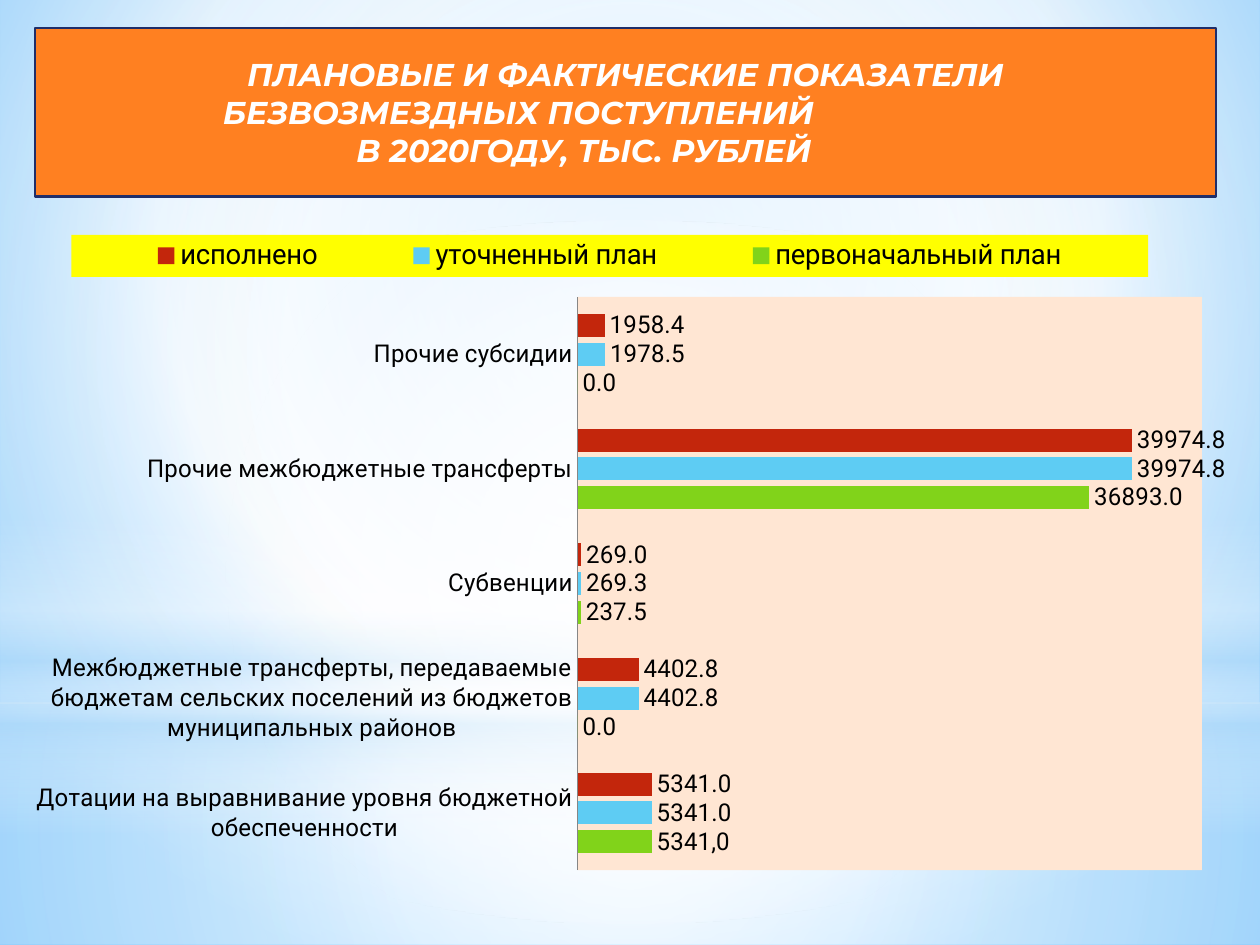
from lxml.etree import SubElement
from pptx import Presentation
from pptx.chart.data import CategoryChartData
from pptx.dml.color import RGBColor
from pptx.enum.chart import XL_CHART_TYPE as ChartType, XL_LABEL_POSITION as LabelPosition
from pptx.enum.chart import XL_LEGEND_POSITION as LegendPosition, XL_TICK_MARK as TickMark
from pptx.enum.shapes import MSO_SHAPE as ShapeKind
from pptx.enum.text import MSO_ANCHOR as Anchor, MSO_AUTO_SIZE as AutoSize, PP_ALIGN as Align
from pptx.oxml import parse_xml
from pptx.oxml.ns import nsdecls, qn
from pptx.util import Inches, Pt

WIDTH, HEIGHT = Inches(10), Inches(7.5)

BLACK = RGBColor(0x00, 0x00, 0x00)
WHITE = RGBColor(0xFF, 0xFF, 0xFF)
GRAY = RGBColor(0x86, 0x86, 0x86)
YELLOW = RGBColor(0xFF, 0xFF, 0x00)
PEACH = RGBColor(0xFF, 0xE6, 0xD3)
ORANGE = RGBColor(0xFF, 0x80, 0x21)
NAVY = RGBColor(0x1F, 0x2E, 0x69)
GREEN = RGBColor(0x81, 0xD3, 0x1A)
SKY = RGBColor(0x5E, 0xCC, 0xF3)
RED = RGBColor(0xC3, 0x26, 0x0C)
PALE_BLUE = RGBColor(0xB4, 0xDC, 0xFA)
LIGHT_BLUE = RGBColor(0x9E, 0xD5, 0xFF)
DEEP_BLUE = RGBColor(0x5B, 0xB9, 0xFF)

CENTER = '<a:path path="circle"><a:fillToRect l="50000" t="50000" r="50000" b="50000"/></a:path>'
UPPER = '<a:path path="circle"><a:fillToRect l="20000" t="10000" r="20000" b="60000"/></a:path>'
DOWNWARD = '<a:lin ang="5400000" scaled="0"/>'

BACKDROP_STOPS = [(0, LIGHT_BLUE, 100), (60, WHITE, 100), (100, DEEP_BLUE, 100)]
BACKDROP_LAYERS = [
    (ShapeKind.RECTANGLE, 0.744, 0.256, CENTER,
     [(0, WHITE, 91), (37, WHITE, 76), (100, PALE_BLUE, 79)]),
    (ShapeKind.RECTANGLE, 0, 0.744, CENTER,
     [(0, WHITE, 89), (48, WHITE, 62), (100, PALE_BLUE, 79)]),
    (ShapeKind.RECTANGLE, 0.549, 0.333, DOWNWARD,
     [(0, WHITE, 0), (29, WHITE, 30), (45, PALE_BLUE, 40),
      (55, WHITE, 26), (65, PALE_BLUE, 60), (100, WHITE, 0)]),
    (ShapeKind.OVAL, 0.233, 0.744, CENTER, [(0, WHITE, 100), (56, WHITE, 0)]),
]

TITLE_LINES = [
    ("ПЛАНОВЫЕ И ФАКТИЧЕСКИЕ ПОКАЗАТЕЛИ", {}),
    ("БЕЗВОЗМЕЗДНЫХ ПОСТУПЛЕНИЙ", {"marR": Inches(1.7)}),
    ("В 2020ГОДУ, ТЫС. РУБЛЕЙ", {"marL": Inches(1.04)}),
]

CATEGORIES = [
    "Дотации на выравнивание уровня бюджетной обеспеченности",
    "Межбюджетные трансферты, передаваемые бюджетам сельских поселений "
    "из бюджетов муниципальных районов",
    "Субвенции",
    "Прочие межбюджетные трансферты",
    "Прочие субсидии",
]
SERIES = [
    ("первоначальный план", (5341, 0, 237.5, 36893, 0), GREEN),
    ("уточненный план", (5341, 4402.8, 269.3, 39974.8, 1978.5), SKY),
    ("исполнено", (5341, 4402.8, 269, 39974.8, 1958.4), RED),
]


def apply_format(target, values):
    for name, value in values.items():
        setattr(target, name, value)


def paint(fill, color):
    fill.solid()
    fill.fore_color.rgb = color


def paint_gradient(fill, owner, stops, direction):
    fill.solid()
    solid = next(owner.iter(qn("a:solidFill")))
    marks = "".join(
        f'<a:gs pos="{position * 1000}"><a:srgbClr val="{color}">'
        f'<a:alpha val="{opacity * 1000}"/></a:srgbClr></a:gs>'
        for position, color, opacity in stops)
    gradient = parse_xml(f'<a:gradFill {nsdecls("a")} rotWithShape="1">'
                         f'<a:gsLst>{marks}</a:gsLst>{direction}</a:gradFill>')
    solid.getparent().replace(solid, gradient)


def build_backdrop(slide):
    master = slide.slide_layout.slide_master
    paint_gradient(master.background.fill, master._element, BACKDROP_STOPS, UPPER)
    for index, (kind, top, height, direction, stops) in enumerate(BACKDROP_LAYERS):
        layer = slide.shapes.add_shape(kind, 0, int(top * HEIGHT), WIDTH, int(height * HEIGHT))
        layer.shadow.inherit = False
        layer.line.fill.background()
        paint_gradient(layer.fill, layer._element.spPr, stops, direction)
        master.shapes._spTree.insert(2 + index, layer._element)


def build_title(slide):
    title = slide.shapes.title
    apply_format(title, {"left": Inches(0.28), "top": Inches(0.22),
                         "width": Inches(9.37), "height": Inches(1.34)})
    title._element.spPr.append(
        parse_xml(f'<a:prstGeom {nsdecls("a")} prst="ellipse"><a:avLst/></a:prstGeom>'))
    paint(title.fill, ORANGE)
    title.line.color.rgb = NAVY
    title.line.width = Pt(1.25)
    frame = title.text_frame
    apply_format(frame, {"word_wrap": True, "auto_size": AutoSize.NONE,
                         "vertical_anchor": Anchor.MIDDLE, "margin_left": 0,
                         "margin_right": 0, "margin_top": 0, "margin_bottom": 0})
    frame.text = "\n".join(text for text, _ in TITLE_LINES)
    for paragraph, (_, margins) in zip(frame.paragraphs, TITLE_LINES):
        paragraph.alignment = Align.CENTER
        properties = paragraph._p.get_or_add_pPr()
        for name, value in margins.items():
            properties.set(name, str(value))
        apply_format(paragraph.runs[0].font, {"name": "Montserrat", "size": Pt(18),
                                              "bold": True, "italic": True})
        paragraph.runs[0].font.color.rgb = WHITE
    slide.shapes._spTree.append(title._element)


def place_part(part, after, inner, **shares):
    for old in part.findall(qn("c:layout")):
        part.remove(old)
    layout = parse_xml(f'<c:layout {nsdecls("c")}><c:manualLayout/></c:layout>')
    manual = layout[0]
    settings = {"layoutTarget": "inner"} if inner else {}
    settings.update({"xMode": "edge", "yMode": "edge"}, **shares)
    for name, value in settings.items():
        SubElement(manual, qn(f"c:{name}")).set("val", str(value))
    if after is None:
        part.insert(0, layout)
    else:
        part.find(qn(after)).addnext(layout)


def add_area_fill(part, before, color):
    properties = parse_xml(f'<c:spPr {nsdecls("c", "a")}><a:solidFill>'
                           f'<a:srgbClr val="{color}"/></a:solidFill></c:spPr>')
    following = part.find(qn(before)) if before else None
    if following is None:
        part.append(properties)
    else:
        following.addprevious(properties)


def format_series(series, color):
    paint(series.format.fill, color)
    series.invert_if_negative = False
    apply_format(series.data_labels, {"show_value": True, "number_format": "0.0",
                                      "number_format_is_linked": False,
                                      "position": LabelPosition.OUTSIDE_END})


def build_chart(slide):
    data = CategoryChartData(number_format="0.0")
    data.categories = CATEGORIES
    for name, values, _ in SERIES:
        data.add_series(name, values)
    chart = slide.shapes.add_chart(ChartType.BAR_CLUSTERED, Inches(0.28), Inches(1.78),
                                   Inches(9.45), Inches(5.28), data).chart
    apply_format(chart, {"has_title": False, "has_legend": True})
    apply_format(chart.font, {"name": "Roboto", "size": Pt(14)})
    chart.font.color.rgb = BLACK
    apply_format(chart.plots[0], {"gap_width": 150, "overlap": -25, "vary_by_categories": False})
    for series, (_, _, color) in zip(chart.plots[0].series, SERIES):
        format_series(series, color)
    label = chart.plots[0].series[0].points[0].data_label
    label.text_frame.text = "5341,0"
    label.position = LabelPosition.OUTSIDE_END
    apply_format(chart.category_axis, {"major_tick_mark": TickMark.NONE,
                                       "minor_tick_mark": TickMark.NONE})
    chart.category_axis.format.line.color.rgb = GRAY
    apply_format(chart.value_axis, {"visible": False, "has_major_gridlines": False})
    plot_area = chart._chartSpace.chart.plotArea
    place_part(plot_area, None, True, x=0.465, y=0.109, w=0.535, h=0.862)
    add_area_fill(plot_area, None, PEACH)
    legend = chart.legend
    apply_format(legend, {"position": LegendPosition.TOP, "include_in_layout": False})
    apply_format(legend.font, {"name": "Roboto", "size": Pt(16)})
    place_part(legend._element, "c:legendPos", False, x=0.031, y=0.016, w=0.923, h=0.063)
    add_area_fill(legend._element, "c:txPr", YELLOW)


def main():
    presentation = Presentation()
    apply_format(presentation, {"slide_width": WIDTH, "slide_height": HEIGHT})
    slide = presentation.slides.add_slide(presentation.slide_layouts[5])
    build_backdrop(slide)
    build_chart(slide)
    build_title(slide)
    presentation.save("out.pptx")


if __name__ == "__main__":
    main()
